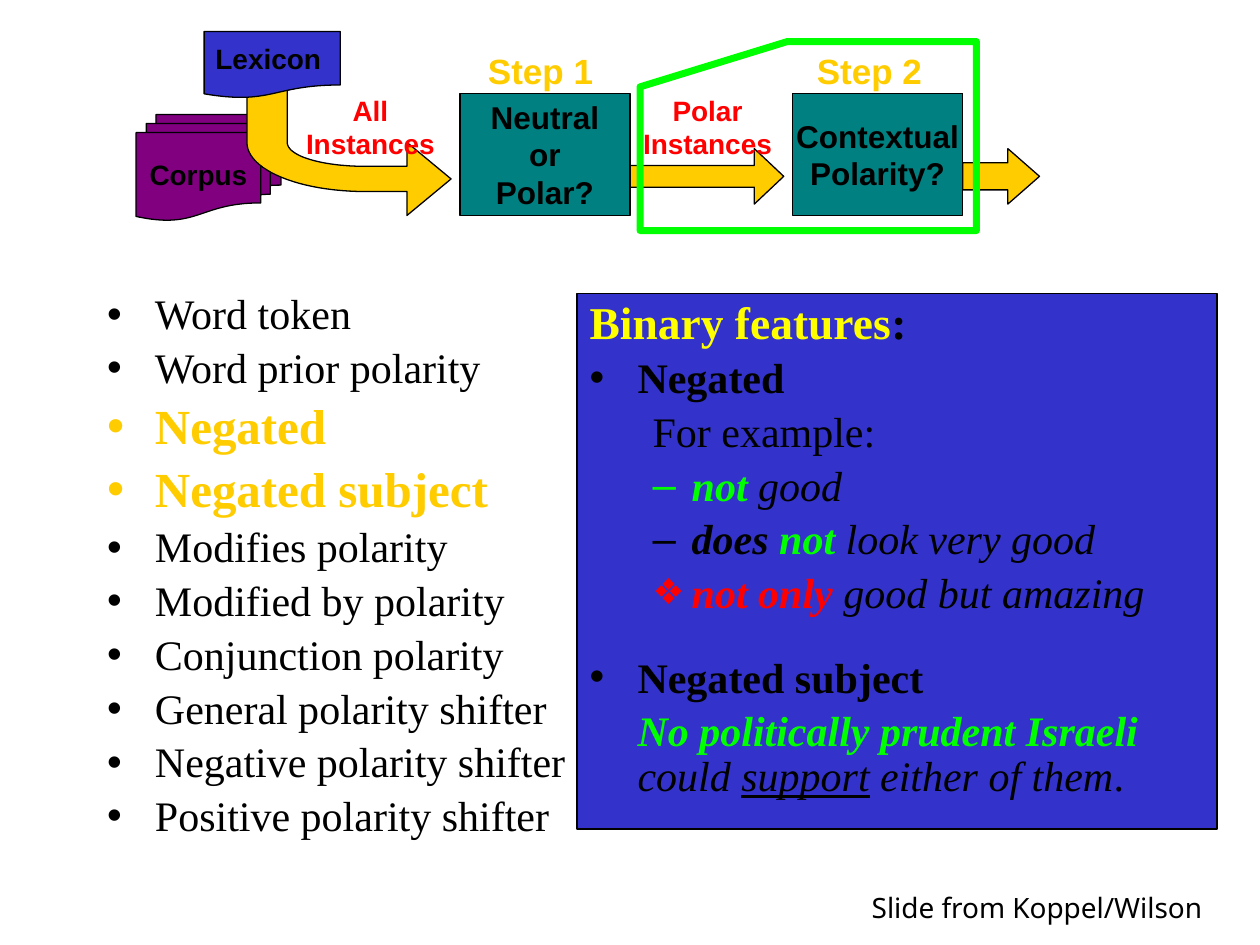
from lxml import etree
from pptx import Presentation
from pptx.dml.color import RGBColor
from pptx.enum.shapes import MSO_SHAPE as SHAPE
from pptx.enum.text import MSO_ANCHOR, MSO_AUTO_SIZE, PP_ALIGN
from pptx.oxml.ns import qn
from pptx.util import Inches, Pt

BLACK = RGBColor(0, 0, 0)
GOLD = RGBColor(0xFF, 0xCC, 0x00)
YELLOW = RGBColor(0xFF, 0xFF, 0x00)
RED = RGBColor(0xFF, 0, 0)
GREEN = RGBColor(0, 0xFF, 0)
BLUE = RGBColor(0x33, 0x33, 0xCC)
PURPLE = RGBColor(0x80, 0, 0x80)
TEAL = RGBColor(0, 0x80, 0x80)
SERIF = "Times New Roman"


def add_para(frame, spans, font, size, before=0, bullet=None, margin=0, indent=0,
             spacing=None, align=None, level=0):
    """Add a paragraph; spans are (text, colour, styles), styles from 'b', 'i', 'u'."""
    para = frame.paragraphs[0]
    if para.runs:
        para = frame.add_paragraph()
    para.level, para.alignment, para.line_spacing = level, align, spacing
    props = para._p.get_or_add_pPr()
    props.set("marL", str(Inches(margin)))
    props.set("indent", str(Inches(indent)))
    space = etree.SubElement(props, qn("a:spcBef"))
    etree.SubElement(space, qn("a:spcPct")).set("val", str(before * 1000))
    if bullet == "❖":
        colour = etree.SubElement(props, qn("a:buClr"))
        etree.SubElement(colour, qn("a:srgbClr")).set("val", str(RED))
        etree.SubElement(props, qn("a:buSzPct")).set("val", "85000")
    if bullet:
        etree.SubElement(props, qn("a:buChar")).set("char", bullet)
    else:
        etree.SubElement(props, qn("a:buNone"))
    for text, colour, styles in spans:
        span = para.add_run()
        span.text = text
        span.font.name, span.font.size = font, Pt(size)
        span.font.color.rgb = colour
        span.font.bold, span.font.italic = "b" in styles, "i" in styles
        span.font.underline = "u" in styles
    return para


def paint(shape, fill):
    shape.shadow.inherit = False
    shape.fill.solid()
    shape.fill.fore_color.rgb = fill
    shape.line.color.rgb = BLACK
    shape.line.width = Pt(0.75)


deck = Presentation()
deck.slide_width, deck.slide_height = Inches(10), Inches(7.5)
page = deck.slides.add_slide(deck.slide_layouts[3])
shapes = page.shapes
title = shapes.title
title.element.getparent().remove(title.element)

# Two text columns
feature_list, example_panel = page.placeholders
for column, place in ((feature_list, (0.75, 2.28, 4.17, 4.39)),
                      (example_panel, (4.58, 2.33, 5.08, 4.25))):
    column.left, column.top, column.width, column.height = map(Inches, place)
    column.text_frame.auto_size = MSO_AUTO_SIZE.NONE
    column.text_frame.word_wrap = True

# Left column: feature list
features = ["Word token", "Word prior polarity", "Negated", "Negated subject",
            "Modifies polarity", "Modified by polarity", "Conjunction polarity",
            "General polarity shifter", "Negative polarity shifter",
            "Positive polarity shifter"]
outer = dict(margin=0.38, indent=-0.38, spacing=0.9)
for feature in features:
    key = feature.startswith("Negated")
    add_para(feature_list.text_frame, [(feature, GOLD if key else BLACK, "b" if key else "")],
             SERIF, 28 if key else 24, 20, "•", **outer)

# Right column: binary features with examples
example_panel.fill.solid()
example_panel.fill.fore_color.rgb = BLUE
example_panel.line.color.rgb = BLACK
example_panel.line.width = Pt(0.75)
panel = example_panel.text_frame
add_para(panel, [("Binary features", YELLOW, "b"), (":", BLACK, "b")], SERIF, 26, 50, **outer)
add_para(panel, [("Negated", BLACK, "b")], SERIF, 24, 20, "•", **outer)
examples = [
    (None, [("For example:", BLACK, "")]),
    ("–", [("not", GREEN, "bi"), (" good", BLACK, "i")]),
    ("–", [("does", BLACK, "bi"), (" not", GREEN, "bi"), (" look very good", BLACK, "i")]),
    ("❖", [("not only ", RED, "bi"), ("good but amazing", BLACK, "i")]),
]
for bullet, spans in examples:
    add_para(panel, spans, SERIF, 24, 20, bullet, 0.81, -0.31, 0.9, level=1)
subject = add_para(panel, [("Negated subject", BLACK, "b")], SERIF, 24, 20, "•",
                   0.38, -0.38, 0.8)
subject.space_before = Pt(25)
add_para(panel, [("No politically prudent Israeli", GREEN, "bi"), (" could ", BLACK, "i"),
                 ("support", BLACK, "iu"), (" either of them", BLACK, "i"),
                 (".", BLACK, "")], SERIF, 24, 20, margin=0.38, spacing=0.9)

# Straight arrows after each step
for left, width, adjustments in ((4.94, 1.28, (0.39, 0.53)), (7.64, 0.61, (0.49, 0.57))):
    arrow = shapes.add_shape(SHAPE.RIGHT_ARROW, Inches(left), Inches(1.18),
                             Inches(width), Inches(0.44))
    arrow.adjustments[0], arrow.adjustments[1] = adjustments
    paint(arrow, GOLD)

# Sources and steps; the bent arrow lies between Corpus and Lexicon
boxes = [
    (SHAPE.FLOWCHART_MULTIDOCUMENT, (1.08, 0.91, 1.15, 0.84), PURPLE, 16, ["Corpus"]),
    (SHAPE.FLOWCHART_DOCUMENT, (1.62, 0.25, 1.08, 0.53), BLUE, 16, ["Lexicon "]),
    (SHAPE.FLOWCHART_PROCESS, (3.65, 0.74, 1.35, 0.97), TEAL, 18, ["Neutral", "or", "Polar?"]),
    (SHAPE.FLOWCHART_PROCESS, (6.29, 0.74, 1.35, 0.97), TEAL, 18, ["Contextual", "Polarity?"]),
]
for kind, place, fill, size, lines in boxes:
    box = shapes.add_shape(kind, *map(Inches, place))
    paint(box, fill)
    box.text_frame.word_wrap = False
    box.text_frame.vertical_anchor = MSO_ANCHOR.MIDDLE
    for line in lines:
        add_para(box.text_frame, [(line, BLACK, "b")], "Arial", size, align=PP_ALIGN.CENTER)

    if kind == SHAPE.FLOWCHART_MULTIDOCUMENT:
        # Bent arrow: the curves are Bezier arcs sampled in equal steps
        curves = [((2.9, 1.52), (2.38, 1.52), (1.96, 1.35), (1.96, 1.13)),
                  ((2.28, 1.13), (2.28, 1.24), (2.56, 1.32), (2.9, 1.32))]
        arcs = []
        for curve in curves:
            arc = []
            for step in range(25):
                t = step / 24
                weights = ((1 - t) ** 3, 3 * t * (1 - t) ** 2, 3 * t * t * (1 - t), t ** 3)
                arc.append(tuple(sum(w * point[axis] for w, point in zip(weights, curve))
                                 for axis in (0, 1)))
            arcs.append(arc)
        outline = [(3.58, 1.42), (3.23, 1.71), (3.23, 1.52), *arcs[0], (1.96, 0.69),
                   (2.28, 0.69), *arcs[1], (3.23, 1.32), (3.23, 1.13)]
        points = [(Inches(x), Inches(y)) for x, y in outline]
        builder = shapes.build_freeform(*points[0])
        builder.add_line_segments(points[1:], close=True)
        paint(builder.convert_to_shape(), GOLD)

# Labels
labels = [
    ((3.65, 0.34, 1.28, 0.43), GOLD, 20, ["Step 1"]),
    ((6.29, 0.34, 1.22, 0.43), GOLD, 20, ["Step 2"]),
    ((2.3, 0.69, 1.28, 0.64), RED, 16, ["All", "Instances"]),
    ((4.94, 0.69, 1.35, 0.64), RED, 16, ["Polar", "Instances"]),
]
for place, colour, size, lines in labels:
    label = shapes.add_textbox(*map(Inches, place))
    label.text_frame.word_wrap = True
    for number, line in enumerate(lines):
        add_para(label.text_frame, [(line, colour, "b")], "Arial", size,
                 0 if number else 50, align=PP_ALIGN.CENTER)

# Green outline around step 2
corners = [(5.08, 0.69), (5.08, 1.83), (7.75, 1.83), (7.75, 0.33), (6.25, 0.33)]
points = [(Inches(x), Inches(y)) for x, y in corners]
builder = shapes.build_freeform(*points[0])
builder.add_line_segments(points[1:], close=True)
highlight = builder.convert_to_shape()
highlight.shadow.inherit = False
highlight.fill.background()
highlight.line.color.rgb = GREEN
highlight.line.width = Pt(4)

# Credit
credit = shapes.add_textbox(Inches(6.82), Inches(7.02), Inches(3.18), Inches(0.37))
credit.text_frame.word_wrap = True
add_para(credit.text_frame, [("Slide from Koppel/Wilson", BLACK, "")], "Noto Sans", 16)

deck.save("out.pptx")
